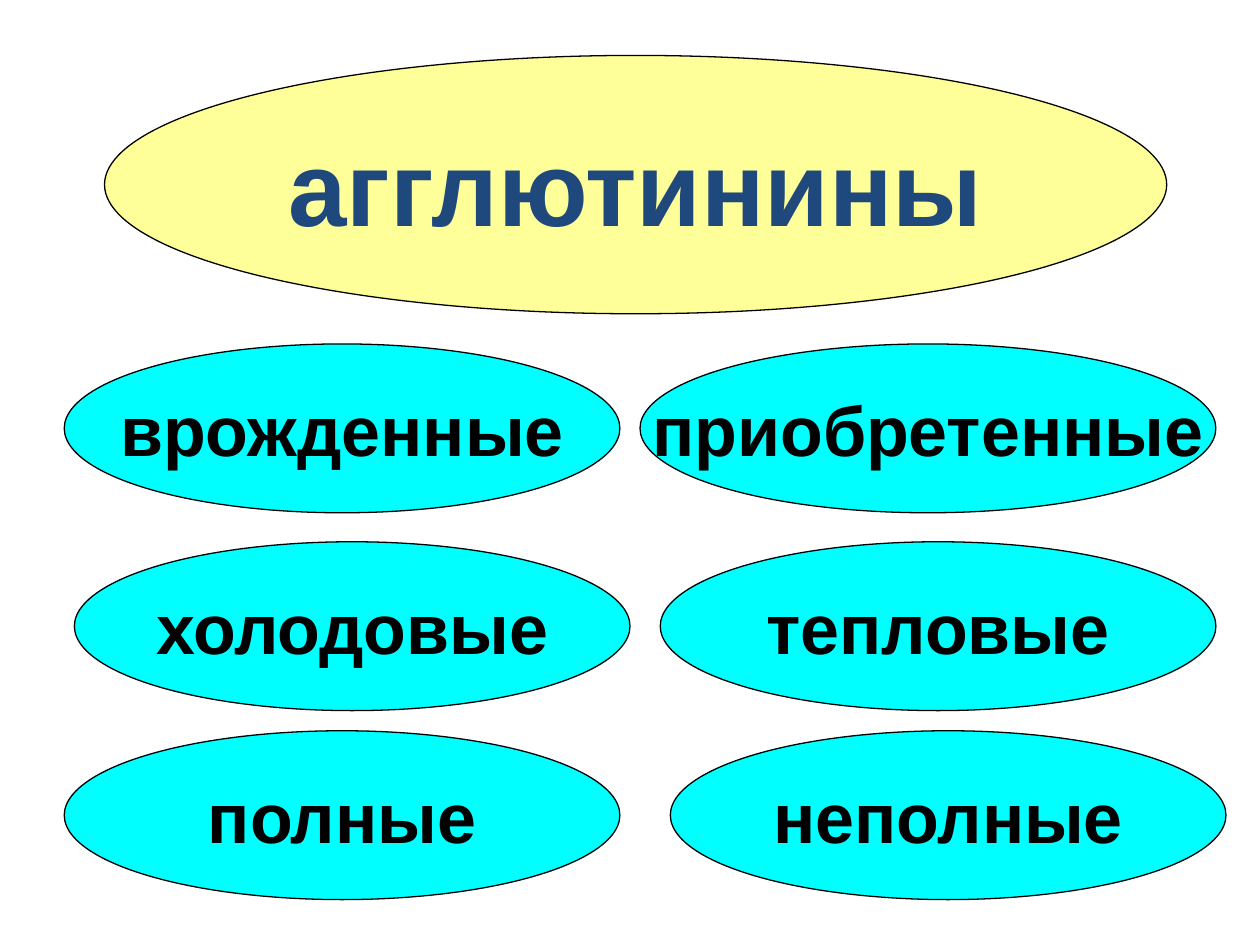
import pptx
import pptx.util
import pptx.dml.color
import pptx.enum.shapes
import pptx.enum.text

Inches = pptx.util.Inches
COLORS = {"title": "FFFF99", "kind": "00FFFF", "navy": "1F497D", "black": "000000"}
TITLE = "агглютинины"
WIDTH, HEIGHT = 4.41, 1.34
ROWS = [
    (2.73, [("врожденные", 0.51, WIDTH), ("приобретенные", 5.08, 4.57)]),
    (4.3, [("холодовые", 0.59, WIDTH), ("тепловые", 5.24, WIDTH)]),
    (5.8, [("полные", 0.51, WIDTH), ("неполные", 5.32, WIDTH)]),
]


def color(name):
    return pptx.dml.color.RGBColor.from_string(COLORS[name])


def write(frame, text, size=40, ink="black"):
    frame.word_wrap = False
    frame.vertical_anchor = pptx.enum.text.MSO_ANCHOR.MIDDLE
    para = frame.paragraphs[0]
    para.alignment = pptx.enum.text.PP_ALIGN.CENTER
    run = para.add_run()
    run.text = text
    run.font.name = "Arial"
    run.font.size = pptx.util.Pt(size)
    run.font.bold = True
    run.font.color.rgb = color(ink)


def oval(slide, box, text, fill="kind", **style):
    shape = slide.shapes.add_shape(
        pptx.enum.shapes.MSO_SHAPE.OVAL, *[Inches(n) for n in box]
    )
    shape.shadow.inherit = False
    shape.fill.solid()
    shape.fill.fore_color.rgb = color(fill)
    shape.line.color.rgb = color("black")
    shape.line.width = pptx.util.Pt(0.75)
    write(shape.text_frame, text, **style)


def main():
    deck = pptx.Presentation()
    deck.slide_width, deck.slide_height = Inches(10), Inches(7.5)
    slide = deck.slides.add_slide(deck.slide_layouts[6])
    oval(slide, (0.83, 0.44, 8.43, 2.05), TITLE, fill="title", size=60, ink="navy")
    for top, kinds in ROWS:
        for text, left, width in kinds:
            oval(slide, (left, top, width, HEIGHT), text)
    deck.save("out.pptx")


if __name__ == "__main__":
    main()
